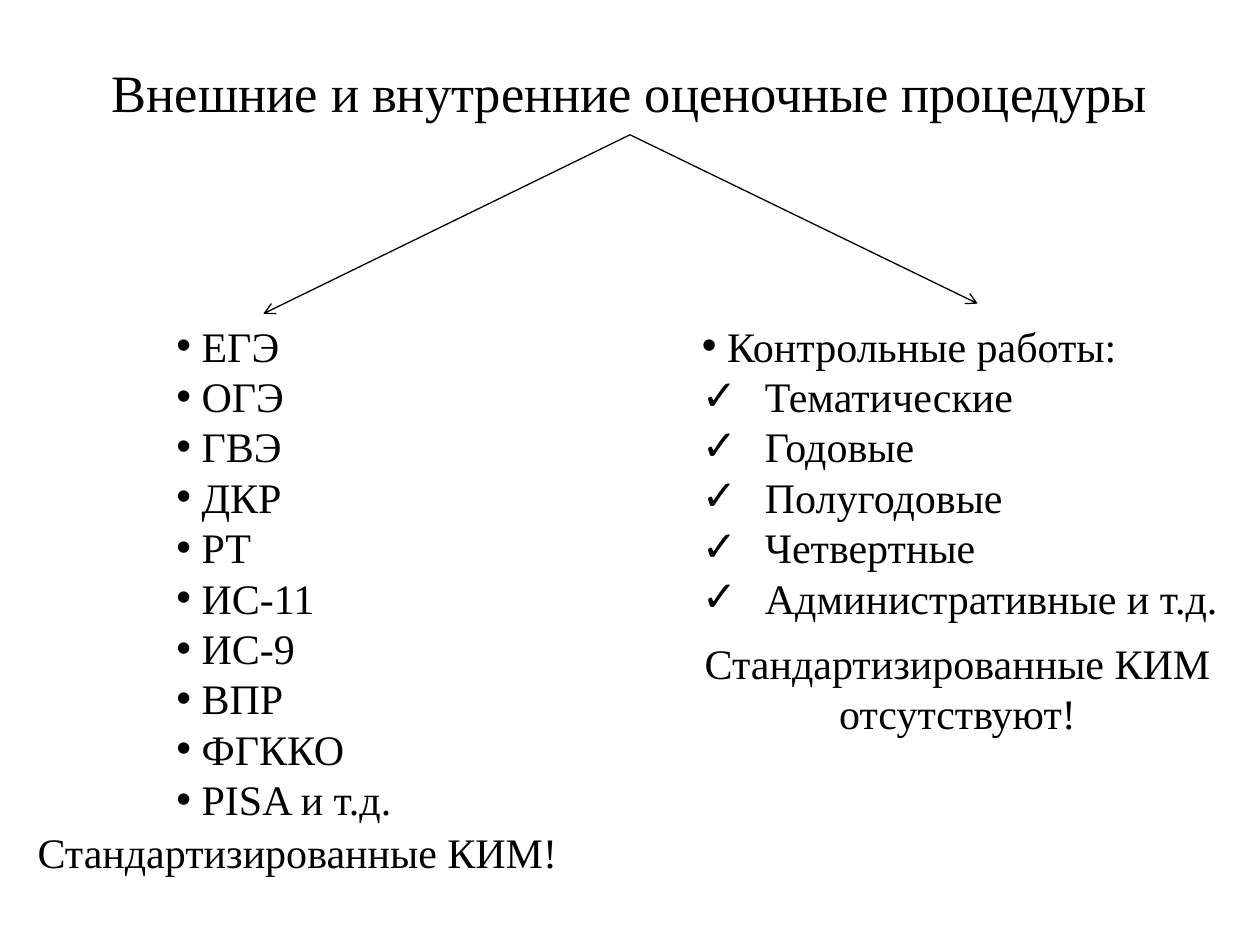
from dataclasses import dataclass

from lxml.etree import SubElement
from pptx import Presentation
from pptx.dml.color import RGBColor as RGB
from pptx.enum.shapes import MSO_CONNECTOR as Link
from pptx.enum.text import MSO_ANCHOR as Anchor, MSO_AUTO_SIZE as Fit, PP_ALIGN as Align
from pptx.oxml.ns import qn
from pptx.util import Inches, Pt


@dataclass(frozen=True)
class Theme:
    face: str = "Times New Roman"
    ink: RGB = RGB(0, 0, 0)
    head: Pt = Pt(30)
    body: Pt = Pt(24)
    lead: Pt = Pt(28.8)
    rule: Pt = Pt(0.75)


class Page:
    def __init__(self, slide, theme):
        self.slide, self.theme = slide, theme

    def place(self, shape, box):
        shape.left, shape.top, shape.width, shape.height = map(Inches, box)

    def style(self, para, size, align):
        para.alignment = align
        para.space_before = Pt(0)
        font = para.font
        font.name, font.size = self.theme.face, size
        font.color.rgb = self.theme.ink

    def bullet(self, para, mark, indent):
        """Hang the text by indent inches behind the mark."""
        props = para._p.get_or_add_pPr()
        props.set("marL", str(Inches(indent)))
        props.set("indent", str(-Inches(indent)))
        SubElement(props, qn("a:buChar")).set("char", mark)

    def title(self, text, box):
        shape = self.slide.shapes.title
        self.place(shape, box)
        frame = shape.text_frame
        frame.text = text
        frame.auto_size = Fit.NONE
        frame.vertical_anchor = Anchor.MIDDLE
        self.style(frame.paragraphs[0], self.theme.head, Align.CENTER)

    def fill(self, frame, lines, align=Align.LEFT):
        frame.text = "\n".join(lines)
        for para in frame.paragraphs:
            self.style(para, self.theme.body, align)
            para.line_spacing = self.theme.lead

    def items(self, slot, rows, box):
        """Fill a body placeholder with (mark, indent, text) rows."""
        shape = self.slide.placeholders[slot]
        self.place(shape, box)
        frame = shape.text_frame
        frame.auto_size = Fit.NONE
        frame.text = "\n".join(text for _, _, text in rows)
        for para, (mark, indent, _) in zip(frame.paragraphs, rows):
            self.bullet(para, mark, indent)
            self.style(para, self.theme.body, Align.LEFT)
            para.line_spacing = self.theme.lead

    def note(self, lines, box, align=Align.LEFT):
        frame = self.slide.shapes.add_textbox(*map(Inches, box)).text_frame
        frame.word_wrap = False
        self.fill(frame, lines, align)

    def arrow(self, start, end):
        line = self.slide.shapes.add_connector(
            Link.STRAIGHT, *map(Inches, (*start, *end)))
        line.line.color.rgb = self.theme.ink
        line.line.width = self.theme.rule
        SubElement(line.line._get_or_add_ln(), qn("a:tailEnd")).set("type", "arrow")
        SubElement(line._element.spPr, qn("a:effectLst"))


def main():
    deck = Presentation()
    deck.slide_width, deck.slide_height = Inches(10), Inches(7.5)
    page = Page(deck.slides.add_slide(deck.slide_layouts[3]), Theme())

    page.title("Внешние и внутренние оценочные процедуры", (0.75, 0.29, 8.5, 0.87))
    for end in ((2.09, 2.49), (7.76, 2.41)):
        page.arrow((5, 1.07), end)

    top = 2.49
    exams = ("ЕГЭ", "ОГЭ", "ГВЭ", "ДКР", "РТ", "ИС-11", "ИС-9", "ВПР",
             "ФГККО", "PISA и т.д.")
    page.items(1, [("•", 0.2, exam) for exam in exams], (1.3, top, 1.97, 5.15))

    tests = ("Тематические", "Годовые", "Полугодовые", "Четвертные",
             "Административные и т.д.")
    rows = [("•", 0.2, "Контрольные работы:")]
    rows += [("✓", 0.5, test) for test in tests]
    page.items(2, rows, (5.47, top, 4.33, 3.53))

    page.note(["Стандартизированные КИМ!"], (0.2, 6.51, 4.37, 0.5))
    page.note(["Стандартизированные КИМ", "отсутствуют!"],
              (5.47, 5.01, 4.26, 0.91), Align.CENTER)
    deck.save("out.pptx")


if __name__ == "__main__":
    main()
